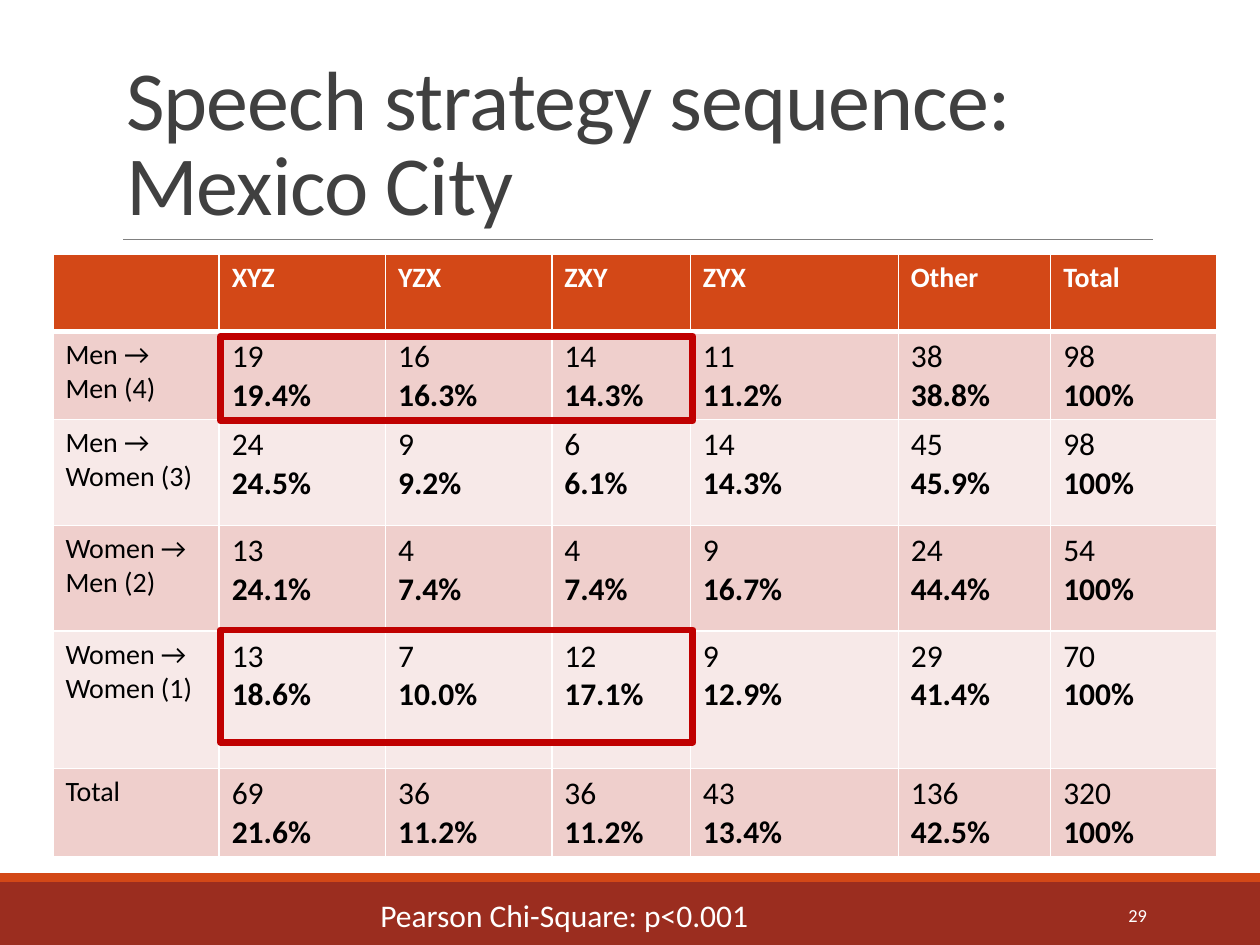
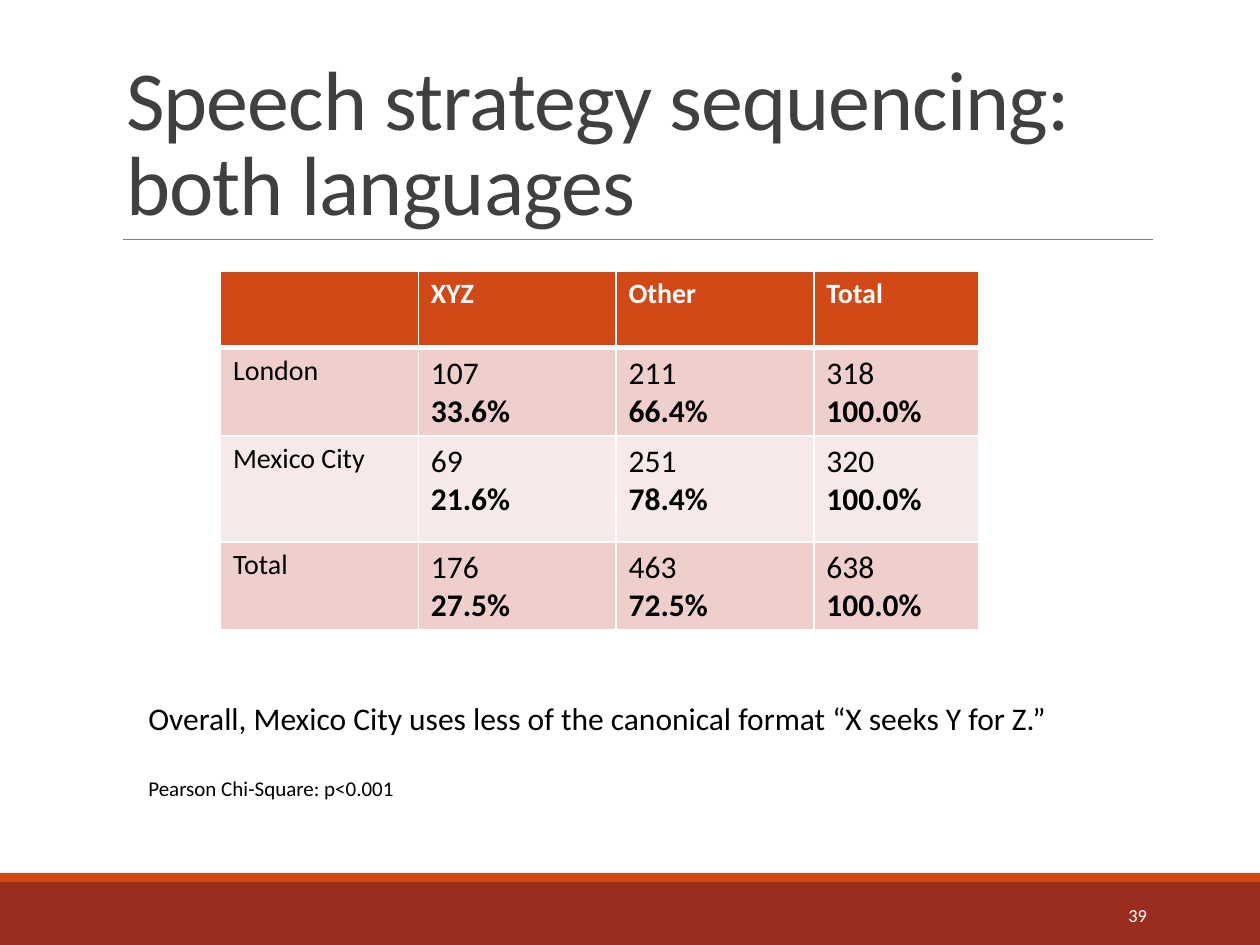
from lxml import etree
from pptx import Presentation
from pptx.dml.color import RGBColor
from pptx.enum.shapes import MSO_CONNECTOR, MSO_SHAPE
from pptx.enum.text import MSO_ANCHOR, MSO_AUTO_SIZE, PP_ALIGN
from pptx.oxml.ns import qn
from pptx.util import Inches, Pt

RECTANGLE = MSO_SHAPE.RECTANGLE
STRAIGHT = MSO_CONNECTOR.STRAIGHT
TOP, MIDDLE, BOTTOM = MSO_ANCHOR.TOP, MSO_ANCHOR.MIDDLE, MSO_ANCHOR.BOTTOM
LEFT, RIGHT = PP_ALIGN.LEFT, PP_ALIGN.RIGHT
NO_FIT = MSO_AUTO_SIZE.NONE

FONT = "Calibri"
TITLE_ONLY = 5
COLORS = {
    "band": "9B2D1F",
    "accent": "D34817",
    "rule": "808080",
    "title": "404040",
    "text": "000000",
    "white": "FFFFFF",
    "odd_row": "EFCFCC",
    "even_row": "F7E9E8",
    "highlight": "C00000",
}


def rgb(color):
    return RGBColor.from_string(COLORS[color])


class Deck:
    def __init__(self):
        self.presentation = Presentation()
        self.presentation.slide_width = Inches(10)
        self.presentation.slide_height = Inches(7.5)
        self.slide = None

    def add_slide(self, title, number):
        """Start a slide with the shared bands, rule, title and page number."""
        layout = self.presentation.slide_layouts[TITLE_ONLY]
        self.slide = self.presentation.slides.add_slide(layout)
        self.rectangle(0, 7, 10, 0.5, fill="band")
        self.rectangle(0, 6.93, 10, 0.07, fill="accent")
        self.rule(0.98, 9.15, 1.9)
        self.title(title)
        self.text(8.12, 7.06, 1.08, 0.4, [(str(number), 10.5, 0)],
                  "white", MIDDLE, RIGHT)

    def add_run(self, paragraph, text, size, color, bold=False):
        run = paragraph.add_run()
        run.text = text
        run.font.name = FONT
        run.font.size = Pt(size)
        run.font.bold = bold
        run.font.color.rgb = rgb(color)
        return run

    def title(self, text):
        shape = self.slide.shapes.title
        shape.left, shape.top = Inches(0.9), Inches(0.31)
        shape.width, shape.height = Inches(8.25), Inches(1.59)
        frame = shape.text_frame
        frame.auto_size = NO_FIT
        frame.vertical_anchor = BOTTOM
        paragraph = frame.paragraphs[0]
        paragraph.alignment = LEFT
        paragraph.line_spacing = 0.85
        run = self.add_run(paragraph, text, 48, "title")
        run.font._element.set("spc", "-50")

    def text(self, left, top, width, height, lines, color,
             anchor=TOP, alignment=LEFT):
        """Add a text box; each line is (text, size, space before)."""
        box = self.slide.shapes.add_textbox(
            Inches(left), Inches(top), Inches(width), Inches(height))
        frame = box.text_frame
        frame.word_wrap = True
        frame.vertical_anchor = anchor
        for index, (text, size, space_before) in enumerate(lines):
            paragraph = frame.add_paragraph() if index else frame.paragraphs[0]
            paragraph.alignment = alignment
            paragraph.space_before = Pt(space_before)
            self.add_run(paragraph, text, size, color)

    def rectangle(self, left, top, width, height, fill=None, line=None):
        shape = self.slide.shapes.add_shape(
            RECTANGLE, Inches(left), Inches(top), Inches(width), Inches(height))
        shape.shadow.inherit = False
        if fill:
            shape.fill.solid()
            shape.fill.fore_color.rgb = rgb(fill)
        else:
            shape.fill.background()
        if line:
            shape.line.color.rgb = rgb(line)
            shape.line.width = Pt(4)
        else:
            shape.line.fill.background()

    def rule(self, left, right, top):
        connector = self.slide.shapes.add_connector(
            STRAIGHT, Inches(left), Inches(top), Inches(right), Inches(top))
        connector.line.color.rgb = rgb("rule")
        connector.line.width = Pt(0.5)
        etree.SubElement(connector._element.spPr, qn("a:effectLst"))

    def cell_borders(self, cell, row_index):
        widths = {"lnL": 1, "lnR": 1,
                  "lnT": 3 if row_index == 1 else 1,
                  "lnB": 3 if row_index == 0 else 1}
        properties = cell._tc.get_or_add_tcPr()
        for side, width in widths.items():
            line = etree.SubElement(properties, qn(f"a:{side}"), w=str(Pt(width)))
            fill = etree.SubElement(line, qn("a:solidFill"))
            etree.SubElement(fill, qn("a:srgbClr"), val=COLORS["white"])

    def table(self, left, top, widths, heights, header, body):
        """Add a table; body rows hold a label and (count, percent) pairs."""
        table = self.slide.shapes.add_table(
            len(heights), len(widths), Inches(left), Inches(top),
            Inches(sum(widths)), Inches(sum(heights))).table
        for column, width in zip(table.columns, widths):
            column.width = Inches(width)
        for row, height in zip(table.rows, heights):
            row.height = Inches(height)
        for row_index, values in enumerate([header] + body):
            if row_index == 0:
                fill, color = "accent", "white"
            else:
                fill, color = ("odd_row" if row_index % 2 else "even_row"), "text"
            for column_index, value in enumerate(values):
                cell = table.cell(row_index, column_index)
                self.cell_borders(cell, row_index)
                cell.fill.solid()
                cell.fill.fore_color.rgb = rgb(fill)
                frame = cell.text_frame
                if isinstance(value, tuple):
                    count, percent = value
                    self.add_run(frame.paragraphs[0], count, 18, color)
                    self.add_run(frame.add_paragraph(), percent, 18, color, True)
                elif value:
                    self.add_run(frame.paragraphs[0], value, 16, color,
                                 row_index == 0)


def build_mexico_city(deck):
    deck.add_slide("Speech strategy sequence: Mexico City", 29)
    deck.table(
        0.42, 2.02,
        [1.32, 1.32, 1.32, 1.1, 1.65, 1.21, 1.32],
        [0.61, 0.66, 0.84, 0.84, 1.09, 0.61],
        ["", "XYZ", "YZX", "ZXY", "ZYX", "Other", "Total"],
        [
            ["Men → Men (4)", ("19", "19.4%"), ("16", "16.3%"), ("14", "14.3%"),
             ("11", "11.2%"), ("38", "38.8%"), ("98", "100%")],
            ["Men → Women (3)", ("24", "24.5%"), ("9", "9.2%"), ("6", "6.1%"),
             ("14", "14.3%"), ("45", "45.9%"), ("98", "100%")],
            ["Women → Men (2)", ("13", "24.1%"), ("4", "7.4%"), ("4", "7.4%"),
             ("9", "16.7%"), ("24", "44.4%"), ("54", "100%")],
            ["Women → Women (1)", ("13", "18.6%"), ("7", "10.0%"), ("12", "17.1%"),
             ("9", "12.9%"), ("29", "41.4%"), ("70", "100%")],
            ["Total", ("69", "21.6%"), ("36", "11.2%"), ("36", "11.2%"),
             ("43", "13.4%"), ("136", "42.5%"), ("320", "100%")],
        ])
    for top, height in [(2.67, 0.67), (5, 0.89)]:
        deck.rectangle(1.75, top, 3.75, height, line="highlight")
    deck.text(2.92, 7.06, 4.25, 0.4,
              [("Pearson Chi-Square: p<0.001", 18, 0)], "white")


def build_both_languages(deck):
    deck.add_slide("Speech strategy sequencing: both languages", 39)
    deck.table(
        1.75, 2.15,
        [1.57, 1.57, 1.57, 1.31],
        [0.61, 0.66, 0.84, 0.61],
        ["", "XYZ", "Other", "Total"],
        [
            ["London", ("107", "33.6%"), ("211", "66.4%"), ("318", "100.0%")],
            ["Mexico City", ("69", "21.6%"), ("251", "78.4%"), ("320", "100.0%")],
            ["Total", ("176", "27.5%"), ("463", "72.5%"), ("638", "100.0%")],
        ])
    deck.text(1.08, 5.5, 8.07, 0.91, [
        ("Overall, Mexico City uses less of the canonical format "
         "“X seeks Y for Z.”", 18, 0),
        ("Pearson Chi-Square: p<0.001", 12, 22),
    ], "text")


def main():
    deck = Deck()
    build_mexico_city(deck)
    build_both_languages(deck)
    deck.presentation.save("out.pptx")


if __name__ == "__main__":
    main()
